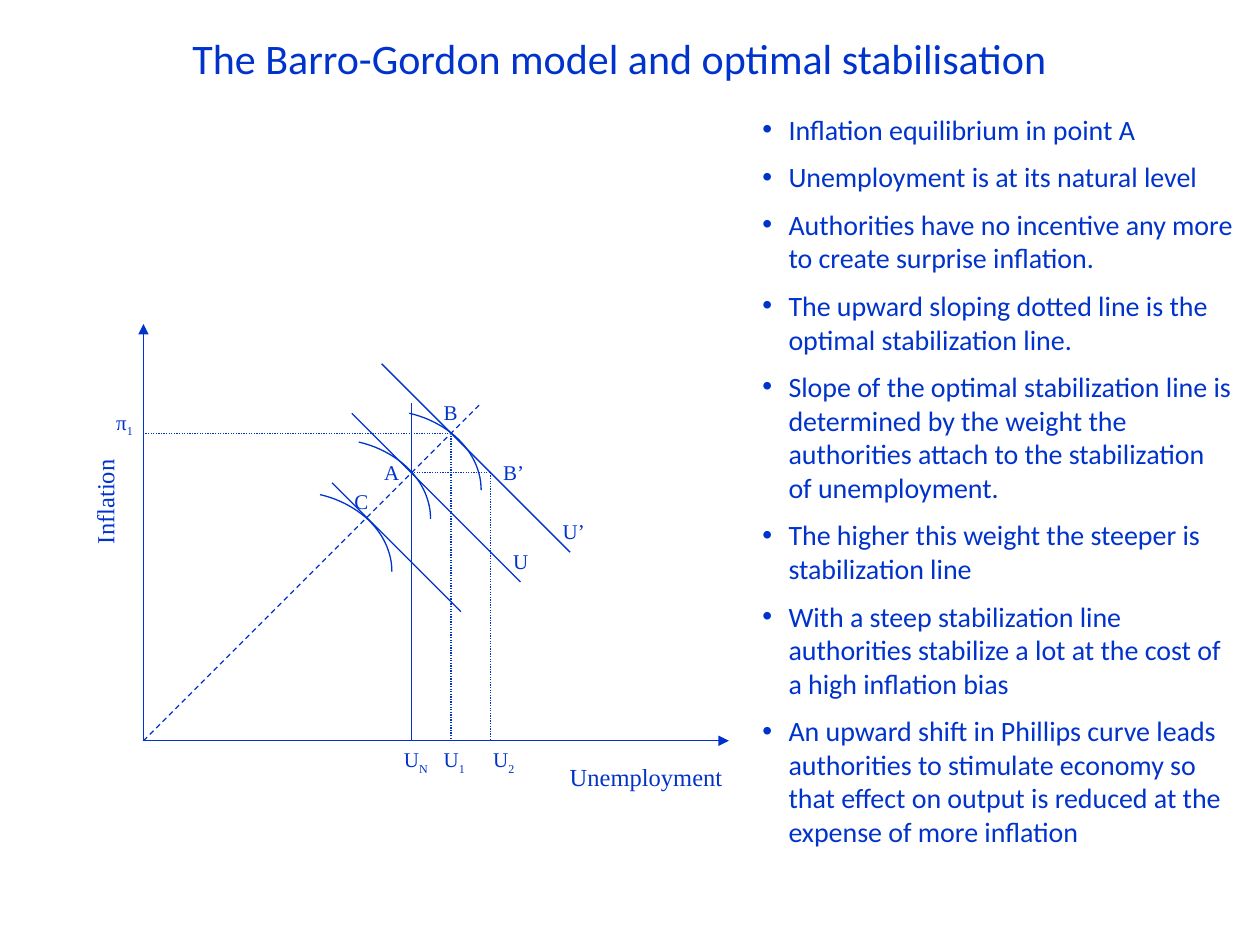
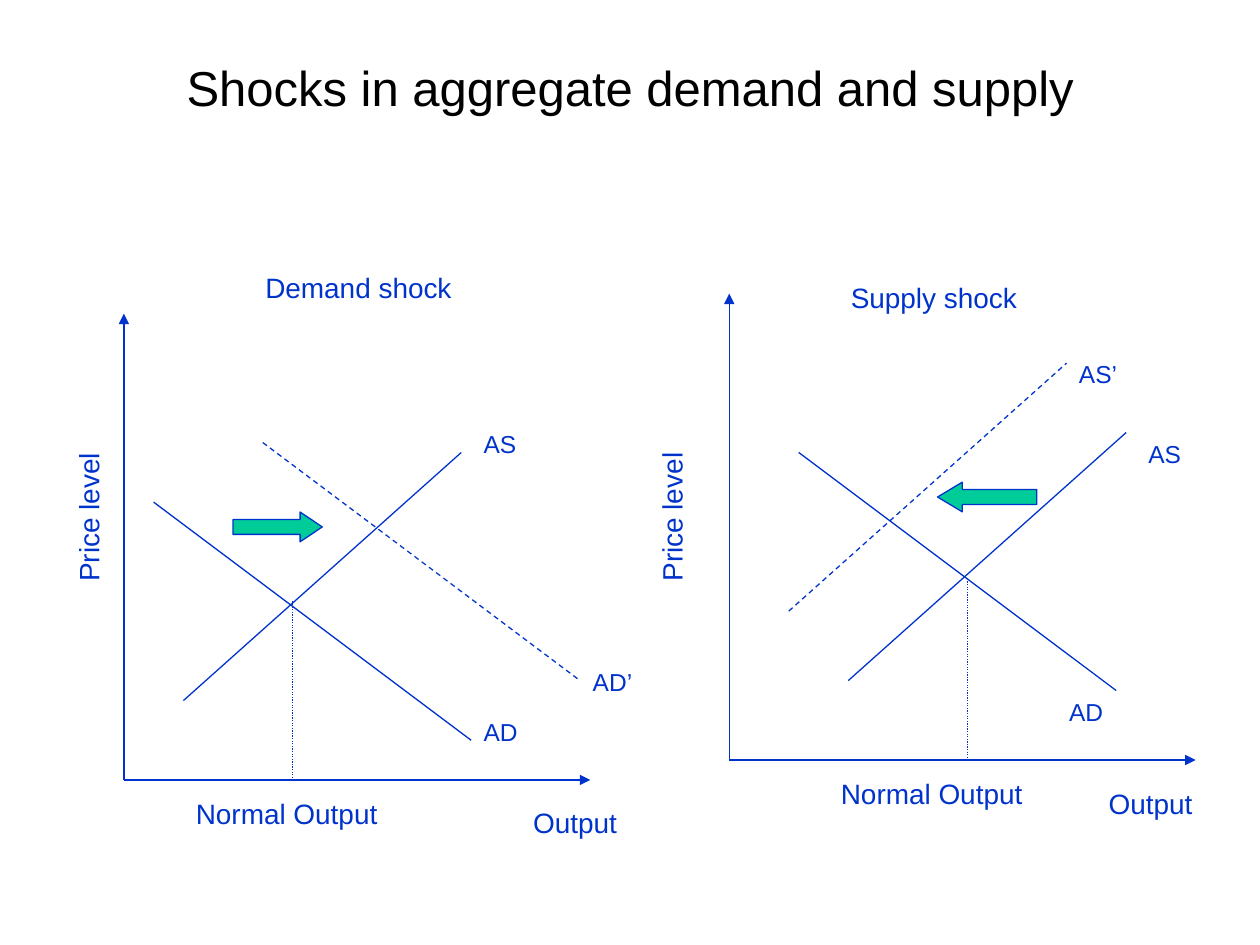
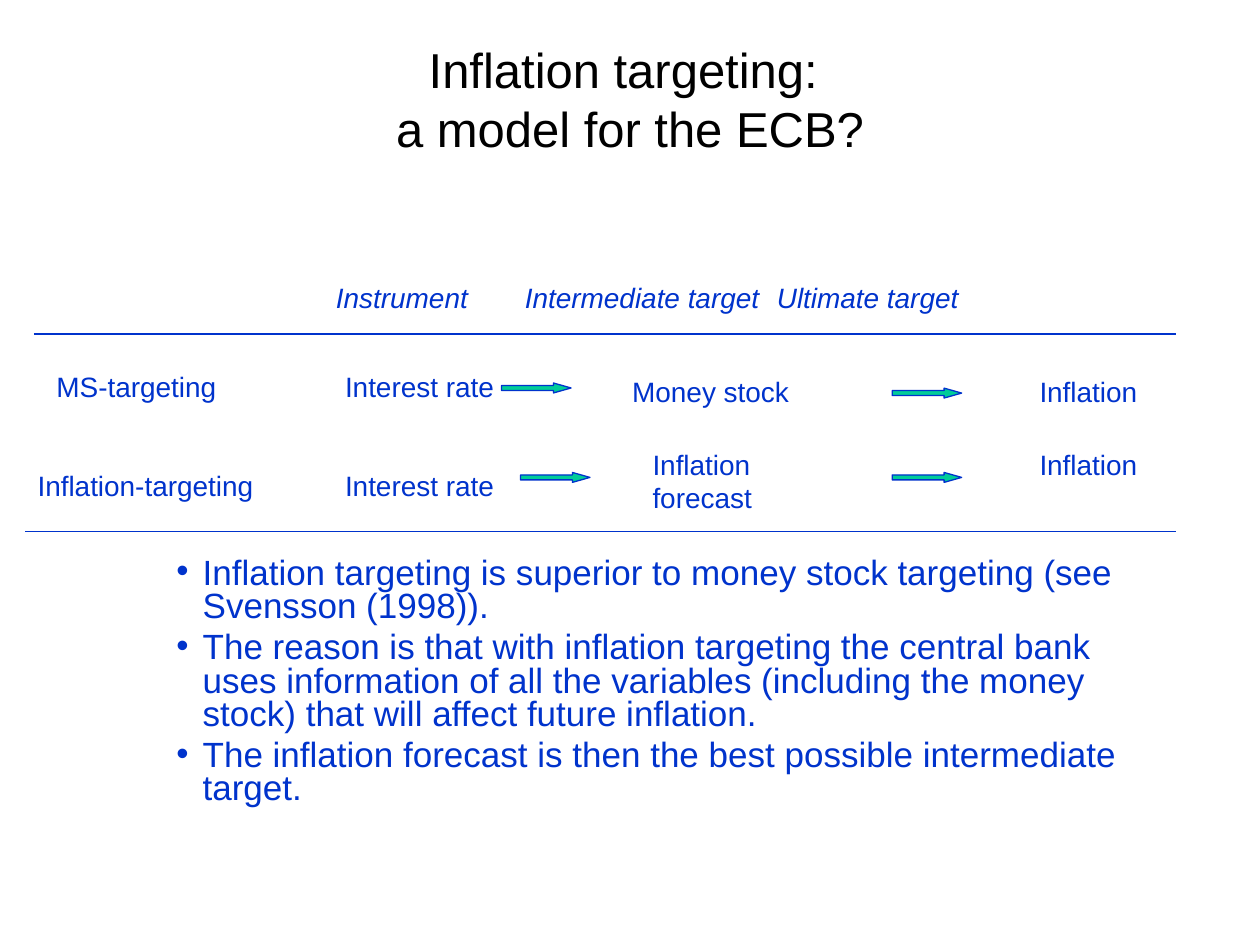
from dataclasses import dataclass

from lxml import etree
from pptx import Presentation
from pptx.dml.color import RGBColor
from pptx.enum import dml, shapes, text
from pptx.oxml import ns
from pptx.util import Pt

BLUE, GREEN, BLACK = "0033CC", "00CC99", "000000"
SANS, SERIF, BODY = "Arial", "Times New Roman", "Calibri"
STEP = 5.67  # drawing grid of the graphs, in points
DASH = dml.MSO_LINE.DASH
DOT = dml.MSO_LINE.ROUND_DOT
CENTER = text.PP_ALIGN.CENTER
RIGHT = shapes.MSO_SHAPE.RIGHT_ARROW
LEFT = shapes.MSO_SHAPE.LEFT_ARROW


# Shared helpers, all lengths in points
def paint(target, color):
    if hasattr(target, "solid"):
        target.solid()
        target = target.fore_color
    target.rgb = RGBColor.from_string(color)


def style(para, size, face, color=BLUE, italic=None):
    for run in para.runs:
        run.font.size = Pt(size)
        run.font.name = face
        run.font.italic = italic
        paint(run.font.color, color)


def place(shape, box):
    shape.left, shape.top, shape.width, shape.height = map(Pt, box)


def line(slide, x1, y1, x2, y2, dash=None, arrow=False):
    link = slide.shapes.add_connector(
        shapes.MSO_CONNECTOR.STRAIGHT, Pt(x1), Pt(y1), Pt(x2), Pt(y2))
    link.line.width = Pt(0.75)
    paint(link.line.color, BLUE)
    if dash:
        link.line.dash_style = dash
    if arrow:
        end = etree.SubElement(link.line._get_or_add_ln(), ns.qn("a:tailEnd"))
        end.set("type", "triangle")
    etree.SubElement(link._element.spPr, ns.qn("a:effectLst"))


def label(slide, words, x, y, w, size=16, face=SANS, align=None, turn=0,
          rows=1, italic=None):
    """Text box; an underscore in words starts a subscript."""
    box = slide.shapes.add_textbox(
        Pt(x), Pt(y), Pt(w), Pt(size * 1.2 * rows + 7.2))
    box.rotation = turn
    box.text_frame.word_wrap = True
    para = box.text_frame.paragraphs[0]
    para.alignment = align
    base, _, sub = words.partition("_")
    para.text = base
    if sub:
        low = para.add_run()
        low.text = sub
        low.font._element.set("baseline", "-25000")
    style(para, size, face, italic=italic)
    return para


def block(slide, kind, box, bend):
    arrow = slide.shapes.add_shape(kind, *map(Pt, box))
    arrow.adjustments[0], arrow.adjustments[1] = 0.5, bend
    arrow.shadow.inherit = False
    paint(arrow.fill, GREEN)
    paint(arrow.line.color, BLUE)
    arrow.line.width = Pt(0.75)


def title(slide, words, box, size=28, face=SANS, color=BLACK):
    head = slide.shapes.title
    place(head, box)
    frame = head.text_frame
    frame.text = words
    frame.auto_size = text.MSO_AUTO_SIZE.NONE
    frame.vertical_anchor = text.MSO_ANCHOR.MIDDLE
    frame.paragraphs[0].alignment = CENTER
    style(frame.paragraphs[0], size, face, color)


def bullets(slide, items, box, size, face, gap, pitch=None):
    body = slide.placeholders[1]
    place(body, box)
    frame = body.text_frame
    frame.text = "\n".join(items)
    frame.auto_size = text.MSO_AUTO_SIZE.NONE
    for i, para in enumerate(frame.paragraphs):
        props = para._p.get_or_add_pPr()
        props.set("marL", str(Pt(15)))
        props.set("indent", str(-Pt(15)))
        para.space_before = Pt(gap if i else 0)
        para.line_spacing = pitch
        style(para, size, face)


# Graph measured in grid steps, right and up from its origin
@dataclass
class Graph:
    slide: object
    left: float
    base: float
    face: str

    def spot(self, x, y):
        return self.left + x * STEP, self.base - y * STEP

    def axes(self, wide, high):
        self.draw(0, 0, 0, high, arrow=True)
        self.draw(0, 0, wide, 0, arrow=True)

    def draw(self, x1, y1, x2, y2, dash=None, arrow=False):
        line(self.slide, *self.spot(x1, y1), *self.spot(x2, y2), dash, arrow)

    def name(self, words, x, y, w, size=14, **opts):
        label(self.slide, words, *self.spot(x, y), w * STEP, size,
              self.face, **opts)

    def side(self, words, x, y, w, size):
        self.name(words, x, y, w, size, align=CENTER, turn=270)

    def arc(self, x, y):
        """Indifference curve that falls to the right of its start."""
        ctrl = [(0, 0), (4.32, 1.02), (7.24, 4.19), (7.24, 7.75)]
        dots = []
        for i in range(25):
            t = i / 24
            mix = [(1 - t) ** 3, 3 * t * (1 - t) ** 2,
                   3 * t * t * (1 - t), t ** 3]
            dx, dy = (sum(m * c[k] for m, c in zip(mix, ctrl)) for k in (0, 1))
            dots.append(tuple(map(Pt, self.spot(x + dx, y - dy))))
        pen = self.slide.shapes.build_freeform(*dots[0])
        pen.add_line_segments(dots[1:], close=False)
        curve = pen.convert_to_shape()
        curve.shadow.inherit = False
        curve.fill.background()
        curve.line.width = Pt(0.75)
        paint(curve.line.color, BLUE)


# Slide 1: policy graph beside a list
def policy(slide, left, base):
    g = Graph(slide, left, base, SERIF)
    g.axes(59, 42)
    g.draw(27, 34, 27, 0)
    for phillips in ((24, 38, 43, 19), (19, 26, 32, 13), (21, 33, 38, 16)):
        g.draw(*phillips)
    g.draw(0, 0, 34, 34, DASH)
    for start in ((17.8, 24.8), (21.7, 30.1), (26.8, 33)):
        g.arc(*start)
    for guide in ((31, 31, 0, 31), (31, 31, 31, 0),
                  (27, 27, 35, 27), (35, 27, 35, 0)):
        g.draw(*guide, DOT)
    for mark in (("A", 23, 29, 4), ("B", 29, 35, 6), ("C", 20, 26, 9),
                 ("B’", 35, 29, 6), ("U", 36, 20, 5), ("U’", 41, 23, 5),
                 ("U_N", 25, 0, 7), ("U_1", 29, 0, 7), ("U_2", 34, 0, 6),
                 ("π_1", -4, 34, 8)):
        g.name(*mark, 12)
    g.name("Unemployment", 41.7, -1.5, 28)
    g.side("Inflation", -14.9, 26.2, 22, 14)


def barro(slide):
    policy(slide, 82, 423.3)
    title(slide, "The Barro-Gordon model and optimal stabilisation",
          (60, 15, 588, 36), 24, BODY, BLUE)
    bullets(slide, [
        "Inflation equilibrium in point A",
        "Unemployment is at its natural level",
        "Authorities have no incentive any more to create surprise inflation.",
        "The upward sloping dotted line is the optimal stabilization line.",
        "Slope of the optimal stabilization line is determined by the weight "
        "the authorities attach to the stabilization of unemployment.",
        "The higher this weight the steeper is stabilization line",
        "With a steep stabilization line authorities stabilize a lot at the "
        "cost of a high inflation bias",
        "An upward shift in Phillips curve leads authorities to stimulate "
        "economy so that effect on output is reduced at the expense of more "
        "inflation",
    ], (428.4, 60.5, 283.7, 440.6), 16, BODY, 8)


# Slide 2: two shock graphs
def shock(slide, left, base, curves, moved, normal, arrow, marks, heads, side):
    g = Graph(slide, left, base, SANS)
    g.axes(47, 47)
    for curve in curves:
        g.draw(*curve)
    g.draw(*moved, DASH)
    g.draw(normal, 18, normal, 0, DOT)
    kind, x, y, w, bend = arrow
    block(slide, kind, (*g.spot(x, y), w * STEP, 3 * STEP), bend)
    for mark in marks:
        g.name(*mark)
    for head in heads:
        g.name(*head, 16)
    g.side("Price level", *side, 21, 16)


def shocks(slide):
    title(slide, "Shocks in aggregate demand and supply", (54, 37.5, 612, 24))
    shock(slide, 70.8, 445.7,
          curves=((6, 8, 34, 33), (3, 28, 35, 4)),
          moved=(14, 34, 46, 10), normal=17,
          arrow=(RIGHT, 11, 27, 9, 0.745),
          marks=(("AD", 35, 7, 7), ("AD’", 46, 12, 8), ("AS", 35, 36, 7)),
          heads=(("Demand shock", 13, 52, 27), ("Output", 40, -2, 19),
                 ("Normal Output", 6, -1, 29)),
          side=(-14.1, 28.8))
    shock(slide, 416.7, 434.3,
          curves=((12, 8, 40, 33), (7, 31, 39, 7)),
          moved=(6, 15, 34, 40), normal=24,
          arrow=(LEFT, 21, 28, 10, 0.833),
          marks=(("AD", 33, 7, 7), ("AS", 41, 33, 7), ("AS’", 34, 41, 7)),
          heads=(("Supply shock", 11, 49, 20), ("Output", 37, -2, 19),
                 ("Normal Output", 10, -1, 29)),
          side=(-16.3, 26.8))


# Slide 3: targeting scheme above a list
def scheme(slide, left, top):
    head = label(slide, "Instrument\tIntermediate target\tUltimate target",
                 left + 167, top, 538.6, italic=True)
    props = head._p.get_or_add_pPr()
    props.set("marL", str(Pt(3.5)))
    props.set("indent", "0")
    tabs = etree.SubElement(props, ns.qn("a:tabLst"))
    for stop in (156.5, 394.5):
        etree.SubElement(tabs, ns.qn("a:tab"), pos=str(Pt(stop)), algn="l")

    for x, y in ((5, 33.8), (0, 146.8)):
        line(slide, left + x, top + y, left + 657.4, top + y)
    for words, x, y, w in (("MS-targeting", 10.8, 50.4, 113),
                           ("Inflation-targeting", 0, 107.3, 164),
                           ("Interest rate", 175.7, 50.4, 108),
                           ("Interest rate", 175.7, 107.3, 108),
                           ("Money stock", 339.8, 53.3, 108)):
        label(slide, words, left + x, top + y, w)
    label(slide, "Inflation forecast", left + 351.4, top + 95, 108, rows=2)
    for y in (53.3, 95):
        label(slide, "Inflation ", left + 555.8, top + y, 108, align=CENTER)
    for x, y in ((272.2, 61.9), (495.4, 64.8), (283, 113), (495.4, 113)):
        block(slide, RIGHT, (left + x, top + y, 39.7, 5.67), 1.767)


def target(slide):
    title(slide, "Inflation targeting: \va model for the ECB?",
          (54, 31.7, 612, 49))
    scheme(slide, 14.4, 157)
    bullets(slide, [
        "Inflation targeting is superior to money stock targeting "
        "(see Svensson (1998)).",
        "The reason is that with inflation targeting the central bank uses "
        "information of all the variables (including the money stock) that "
        "will affect future inflation.",
        "The inflation forecast is then the best possible intermediate "
        "target.",
    ], (93.6, 315.4, 567.4, 184.3), 20, SANS, 4, 0.8)


def main():
    deck = Presentation()
    deck.slide_width, deck.slide_height = Pt(720), Pt(540)
    for build, layout in ((barro, 1), (shocks, 5), (target, 1)):
        build(deck.slides.add_slide(deck.slide_layouts[layout]))
    deck.save("out.pptx")


if __name__ == "__main__":
    main()
